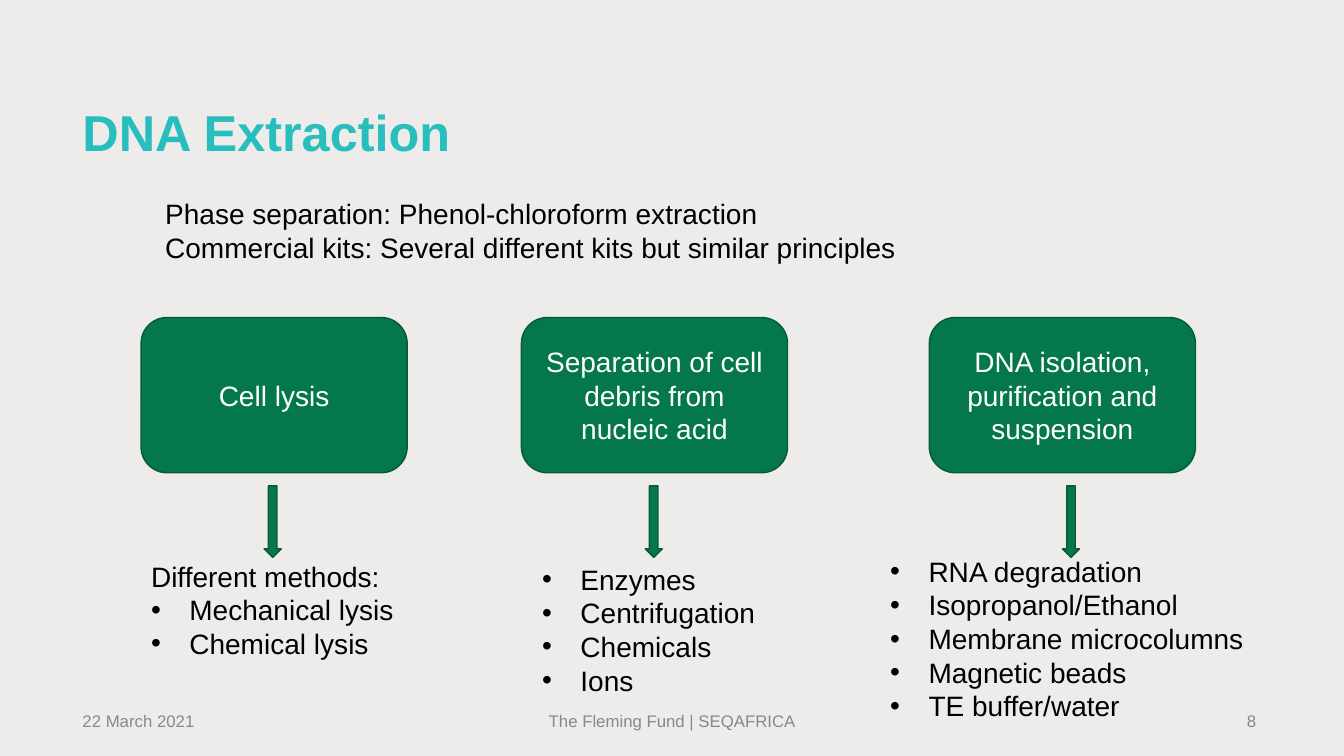
from lxml.etree import SubElement
from pptx import Presentation
from pptx.dml.color import RGBColor
from pptx.enum.shapes import MSO_SHAPE
from pptx.enum.text import MSO_ANCHOR, PP_ALIGN
from pptx.oxml.ns import qn
from pptx.util import Inches, Pt

deck = Presentation()
deck.slide_width, deck.slide_height = Inches(13.33), Inches(7.5)
page = deck.slides.add_slide(deck.slide_layouts[6])

# The slide is a grid of 100 columns by 100 rows
COLUMN, ROW = deck.slide_width / 100, deck.slide_height / 100
BULLET_INDENT = Inches(0.38)

BODY = {"size": Pt(20), "color": "000000"}
FOOTER = {"size": Pt(12), "color": "898989"}
TITLE = {"size": Pt(36), "color": "28BEBE", "bold": True}
STEP = {"size": Pt(20), "color": "FFFFFF"}


def add_box(area, lines=(), style=BODY, align=PP_ALIGN.LEFT,
            anchor=MSO_ANCHOR.MIDDLE, preset=None, bullets_from=None):
    """Add a text box, or a green shape if a preset is given, at (column, row, columns, rows)."""
    left, top, width, height = area
    place = [int(left * COLUMN), int(top * ROW), int(width * COLUMN), int(height * ROW)]
    if preset is None:
        box = page.shapes.add_textbox(*place)
    else:
        box = page.shapes.add_shape(preset, *place)
        box.shadow.inherit = False
        paint(box.fill, "05784B")
        paint(box.line.fill, "045937")
        box.line.width = Pt(1)
    frame = box.text_frame
    frame.word_wrap = True
    frame.vertical_anchor = anchor
    for number, line in enumerate(lines):
        para = frame.add_paragraph() if number else frame.paragraphs[0]
        para.alignment = align
        if bullets_from is not None and number >= bullets_from:
            properties = para._p.get_or_add_pPr()
            properties.set("marL", str(BULLET_INDENT))
            properties.set("indent", str(-BULLET_INDENT))
            SubElement(properties, qn("a:buFont"), typeface="Arial")
            SubElement(properties, qn("a:buChar"), char="•")
        span = para.add_run()
        span.text = line
        span.font.name = "Arial"
        for name, value in style.items():
            if name == "color":
                paint(span.font.fill, value)
            else:
                setattr(span.font, name, value)
    return box


def paint(fill, color):
    fill.solid()
    fill.fore_color.rgb = RGBColor.from_string(color)


paint(page.background.fill, "EDECEB")

# Footer
for left, width, text, align in [
    (5.4, 22.5, "22 March 2021", PP_ALIGN.LEFT),
    (33.15, 33.75, "The Fleming Fund | SEQAFRICA", PP_ALIGN.CENTER),
    (71.7, 22.5, "8", PP_ALIGN.RIGHT),
]:
    add_box((left, 93.33, width, 4), [text], FOOTER, align)

# Title and introduction
title = add_box((5.4, 10.27, 88.8, 15.2), ["DNA Extraction"], TITLE)
title.text_frame.paragraphs[0].line_spacing = 0.9
add_box((11.55, 25.33, 78.85, 10.27), [
    "Phase separation: Phenol-chloroform extraction",
    "Commercial kits: Several different kits but similar principles",
], anchor=MSO_ANCHOR.TOP)

# Extraction steps: box column, name, arrow column, list area, first bullet, list
steps = [
    (10.5, "Cell lysis", 19.65, (10.5, 73.33, 20.7, 14.8), 1,
     ["Different methods:", "Mechanical lysis", "Chemical lysis"]),
    (38.8, "Separation of cell debris from nucleic acid", 48, (39.6, 73.73, 20.7, 19.33), 0,
     ["Enzymes", "Centrifugation", "Chemicals", "Ions"]),
    (69.15, "DNA isolation, purification and suspension", 79.05, (65.5, 72.67, 28.65, 23.73), 0,
     ["RNA degradation", "Isopropanol/Ethanol", "Membrane microcolumns",
      "Magnetic beads", "TE buffer/water"]),
]
for box_left, name, arrow_left, list_area, first_bullet, details in steps:
    add_box((box_left, 42, 19.8, 20.53), [name], STEP, PP_ALIGN.CENTER,
            preset=MSO_SHAPE.ROUNDED_RECTANGLE)
    add_box((arrow_left, 64.27, 1.28, 9.47), preset=MSO_SHAPE.DOWN_ARROW)
    add_box(list_area, details, anchor=MSO_ANCHOR.TOP, bullets_from=first_bullet)

deck.save("out.pptx")
